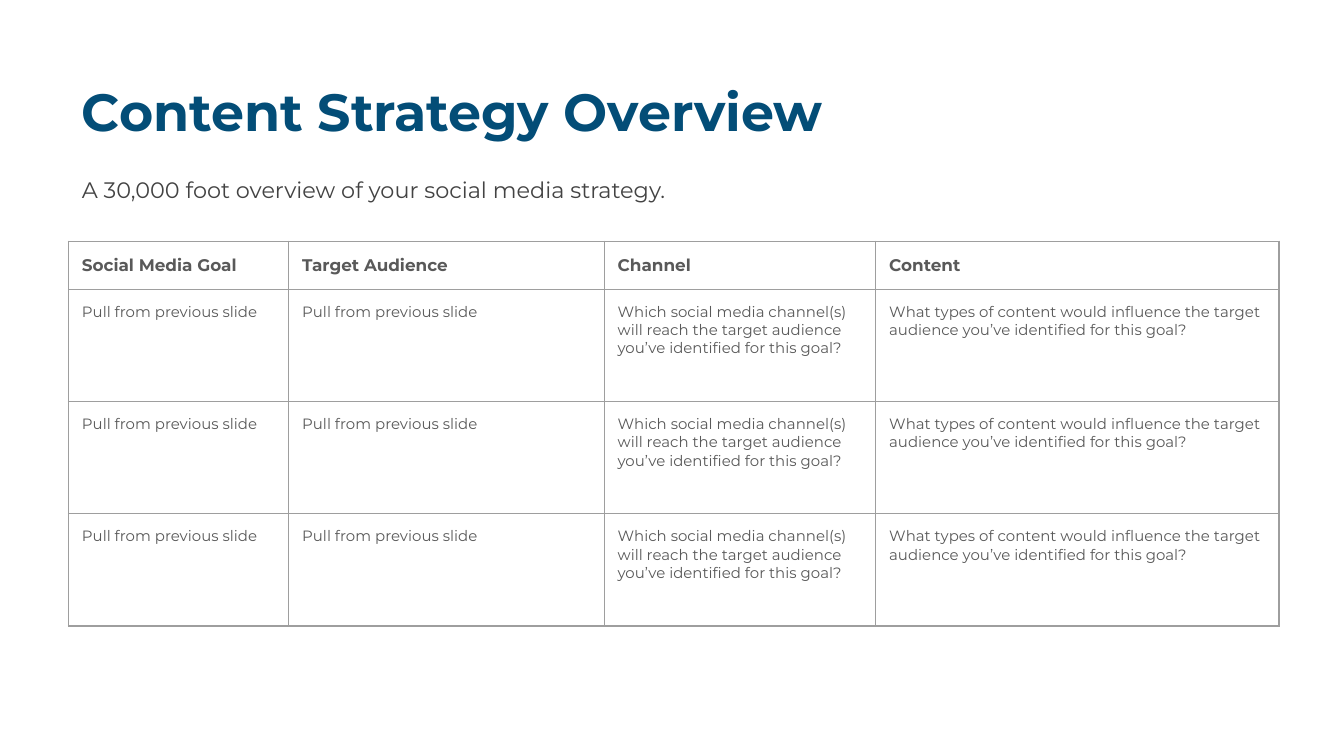
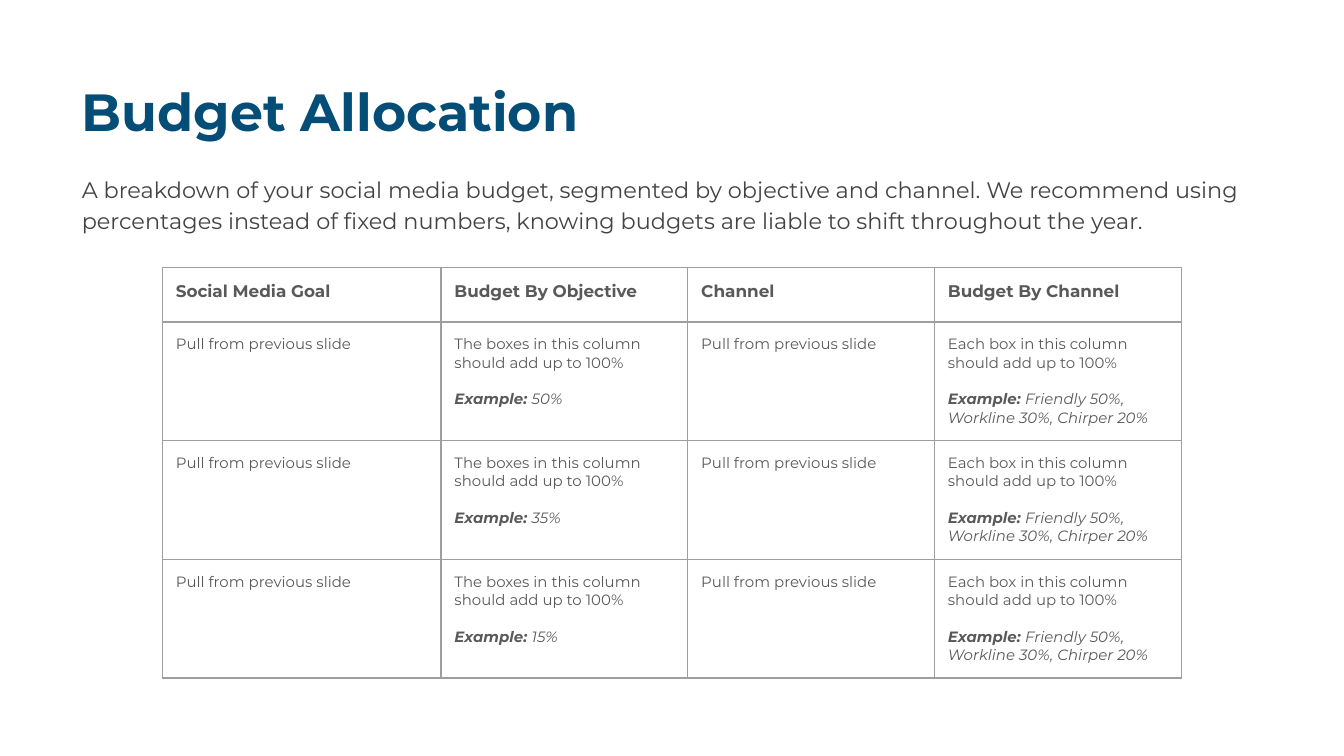
"""Build two social media planning slides, each with a title, lead text and table."""
import pptx
import pptx.util
import pptx.dml.color
import pptx.enum.text
import pptx.oxml.ns
from lxml import etree

Pt = pptx.util.Pt
Anchor = pptx.enum.text.MSO_ANCHOR
FACE = "Montserrat"
NAVY, DARK, GREY, RULE = "034D77", "434343", "595959", "9E9E9E"
PAD = 7.2
LEFT, WIDTH = 36.7, 648.7

PULL = "Pull from previous slide"
REACH = ("Which social media channel(s) will reach the target audience "
         "you’ve identified for this goal?")
TYPES = ("What types of content would influence the target audience "
         "you’ve identified for this goal?")
BOXES = "The boxes in this column should add up to 100%"
EACH = "Each box in this column should add up to 100%"
SPLIT = "Friendly 50%, Workline 30%, Chirper 20%"

SLIDES = [
    {
        "title": "Content Strategy Overview",
        "lead": "A 30,000 foot overview of your social media strategy.",
        "tall": 38,
        "at": (LEFT, 129.3),
        "cols": (118, 169, 145.5, 216),
        "rows": (25.6, 60.2),
        "anchor": Anchor.MIDDLE,
        "head": ("Social Media Goal", "Target Audience", "Channel", "Content"),
        "body": [(PULL, PULL, REACH, TYPES)] * 3,
    },
    {
        "title": "Budget Allocation",
        "lead": "A breakdown of your social media budget, segmented by objective "
                "and channel. We recommend using percentages instead of fixed "
                "numbers, knowing budgets are liable to shift throughout the year.",
        "tall": 45.4,
        "at": (87, 143.3),
        "cols": (149.3, 132.2, 132.2, 132.2),
        "rows": (29.2, 63.6),
        "anchor": Anchor.TOP,
        "head": ("Social Media Goal", "Budget By Objective", "Channel",
                 "Budget By Channel"),
        "body": [(PULL, (BOXES, part), PULL, (EACH, SPLIT))
                 for part in ("50%", "35%", "15%")],
    },
]


def paint(color, code):
    """Set a colour from a hex string."""
    color.rgb = pptx.dml.color.RGBColor.from_string(code)


def apply(item, values):
    """Set each named value on an object."""
    for name, value in values.items():
        setattr(item, name, value)


def write(para, text, size, code, bold=False, italic=False):
    """Add one formatted run to a paragraph."""
    run = para.add_run()
    run.text = text
    apply(run.font, {"name": FACE, "size": Pt(size), "bold": bold, "italic": italic})
    paint(run.font.color, code)


def frame(shape, top, tall):
    """Place a text shape in the page column and return its first paragraph."""
    apply(shape, {"left": Pt(LEFT), "top": Pt(top),
                  "width": Pt(WIDTH), "height": Pt(tall)})
    sides = {"margin_" + side: Pt(PAD) for side in ("left", "right", "top", "bottom")}
    apply(shape.text_frame, {"word_wrap": True, "vertical_anchor": Anchor.TOP,
                             "auto_size": pptx.enum.text.MSO_AUTO_SIZE.NONE, **sides})
    para = shape.text_frame.paragraphs[0]
    para.alignment = pptx.enum.text.PP_ALIGN.LEFT
    return para


def edge(cell):
    """Draw a thin rule on all four sides of a cell."""
    props = cell._tc.get_or_add_tcPr()
    tag = pptx.oxml.ns.qn
    for side in "LRTB":
        line = etree.SubElement(props, tag("a:ln" + side), w=str(int(Pt(0.75))))
        fill = etree.SubElement(line, tag("a:solidFill"))
        etree.SubElement(fill, tag("a:srgbClr"), val=RULE)


def fill(cell, item, head, anchor):
    """Format a table cell and write its text and optional example."""
    edge(cell)
    cell.fill.background()
    apply(cell, {"margin_left": Pt(PAD), "margin_right": Pt(PAD),
                 "margin_top": Pt(PAD), "margin_bottom": Pt(PAD),
                 "vertical_anchor": anchor if head else Anchor.TOP})
    text, case = item if isinstance(item, tuple) else (item, None)
    para = cell.text_frame.paragraphs[0]
    write(para, text, 9 if head else 8, GREY, head)
    if case:
        para = cell.text_frame.add_paragraph()
        para.space_before = Pt(9.75)
        write(para, "Example: ", 8, GREY, True, True)
        write(para, case, 8, GREY, False, True)


def grid(slide, data):
    """Add the table of a slide."""
    lines = [data["head"], *data["body"]]
    first, rest = data["rows"]
    highs = [first] + [rest] * len(data["body"])
    left, top = data["at"]
    table = slide.shapes.add_table(
        len(lines), len(data["cols"]), Pt(left), Pt(top),
        Pt(sum(data["cols"])), Pt(sum(highs))).table
    apply(table, {"first_row": False, "horz_banding": False})
    for col, wide in zip(table.columns, data["cols"]):
        col.width = Pt(wide)
    for num, (row, high, line) in enumerate(zip(table.rows, highs, lines)):
        row.height = Pt(high)
        for cell, item in zip(row.cells, line):
            fill(cell, item, num == 0, data["anchor"])


def build(deck, data):
    """Add one slide with its title, lead text and table."""
    slide = deck.slides.add_slide(deck.slide_layouts[5])
    para = frame(slide.shapes.title, 35.3, 45.4)
    para.line_spacing = 1.0
    write(para, data["title"], 28, NAVY, True)
    box = slide.shapes.add_textbox(0, 0, 0, 0)
    para = frame(box, 85, data["tall"])
    apply(para, {"line_spacing": 1.15, "space_after": Pt(16)})
    write(para, data["lead"], 12, DARK)
    grid(slide, data)


def main():
    """Build and save the deck."""
    deck = pptx.Presentation()
    apply(deck, {"slide_width": Pt(720), "slide_height": Pt(405)})
    for data in SLIDES:
        build(deck, data)
    deck.save("out.pptx")


if __name__ == "__main__":
    main()
